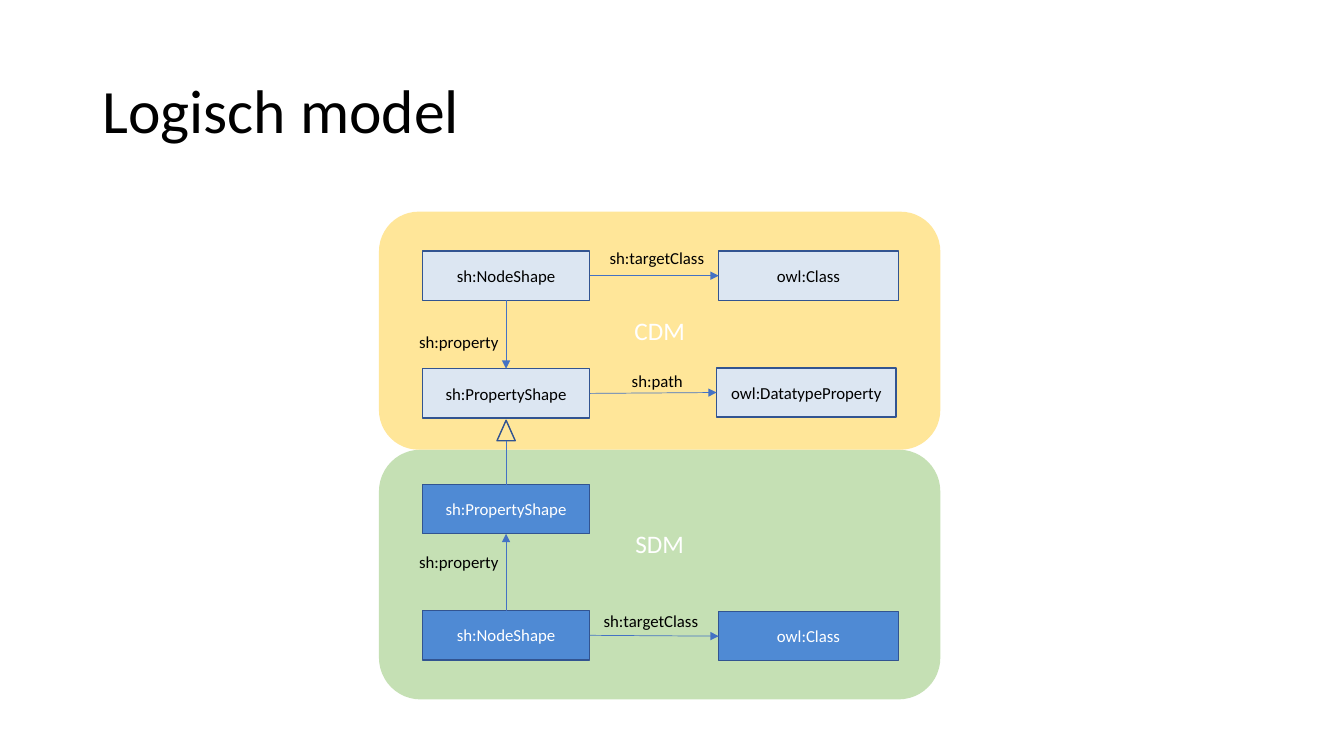
from dataclasses import dataclass

from lxml.etree import SubElement
from pptx import Presentation
from pptx.dml.color import RGBColor
from pptx.enum.shapes import MSO_CONNECTOR as Connector, MSO_SHAPE as Shape
from pptx.enum.text import MSO_ANCHOR as Anchor, PP_ALIGN as Align
from pptx.oxml.ns import qn
from pptx.util import Pt


@dataclass(frozen=True)
class Theme:
    font: str = "Calibri"
    title_size: int = 44
    region_size: int = 18
    node_size: int = 12
    black: str = "000000"
    white: str = "FFFFFF"
    yellow: str = "FFE699"
    green: str = "C5E0B4"
    pale: str = "DCE6F2"
    blue: str = "4F8AD4"
    border: str = "325491"
    arrow: str = "4472C4"


TOP, LEFT, BOTTOM, RIGHT = range(4)  # connection sites of a rectangle
NODE_HEIGHT = 35.2
LEFT_COLUMN = (301.7, 119.6)
RIGHT_COLUMN = (513.4, 128.2)
REGION_X, REGION_WIDTH = 270.7, 401


def write(frame, text, *, font, size, color, align=Align.LEFT,
          anchor=Anchor.TOP, spacing=1.0):
    frame.word_wrap = True
    frame.vertical_anchor = anchor
    para = frame.paragraphs[0]
    para.alignment = align
    para.line_spacing = spacing
    span = para.add_run()
    span.text = text
    span.font.name = font
    span.font.size = Pt(size)
    span.font.color.rgb = RGBColor.from_string(color)


class ModelPage:
    def __init__(self, deck, theme):
        self.theme = theme
        self.page = deck.slides.add_slide(deck.slide_layouts[5])
        self.shapes = self.page.shapes

    def title(self, text):
        box = self.shapes.title
        box.left, box.top, box.width, box.height = map(Pt, (66, 28.8, 828, 104.4))
        write(box.text_frame, text, font=self.theme.font,
              size=self.theme.title_size, color=self.theme.black,
              anchor=Anchor.MIDDLE, spacing=0.9)

    def shape(self, kind, bounds, fill=None, border=None):
        box = self.shapes.add_shape(kind, *map(Pt, bounds))
        box.shadow.inherit = False
        if fill:
            box.fill.solid()
            box.fill.fore_color.rgb = RGBColor.from_string(fill)
        else:
            box.fill.background()
        if border:
            box.line.color.rgb = RGBColor.from_string(border)
            box.line.width = Pt(1)
        else:
            box.line.fill.background()
        return box

    def region(self, text, top, height, fill, lift=0):
        """Draw a rounded area whose name sits `lift` above its middle."""
        bounds = (REGION_X, top, REGION_WIDTH, height)
        box = self.shape(Shape.ROUNDED_RECTANGLE, bounds, fill)
        box.text_frame.margin_bottom = Pt(3.6 + 2 * lift)
        write(box.text_frame, text, font=self.theme.font,
              size=self.theme.region_size, color=self.theme.white,
              align=Align.CENTER, anchor=Anchor.MIDDLE)

    def node(self, text, column, top, fill, color):
        x, width = column
        box = self.shape(Shape.RECTANGLE, (x, top, width, NODE_HEIGHT),
                         fill, self.theme.border)
        write(box.text_frame, text, font=self.theme.font,
              size=self.theme.node_size, color=color,
              align=Align.CENTER, anchor=Anchor.MIDDLE)
        return box

    def label(self, text, x, top, width):
        box = self.shapes.add_textbox(Pt(x), Pt(top), Pt(width), Pt(21.8))
        write(box.text_frame, text, font=self.theme.font,
              size=self.theme.node_size, color=self.theme.black)

    def line(self, begin=(0, 0), end=(0, 0)):
        line = self.shapes.add_connector(
            Connector.STRAIGHT, *map(Pt, (*begin, *end)))
        line.line.color.rgb = RGBColor.from_string(self.theme.arrow)
        line.line.width = Pt(0.5)
        SubElement(line._element.spPr, qn("a:effectLst"))
        return line

    def arrow(self, source, source_site, target, target_site):
        line = self.line()
        line.begin_connect(source, source_site)
        line.end_connect(target, target_site)
        SubElement(line.line._get_or_add_ln(), qn("a:tailEnd"), type="triangle")

    def inheritance(self, center, tip, base, end):
        """Draw a hollow triangle pointing up, with a stem down to `end`."""
        width = 13
        self.shape(Shape.ISOSCELES_TRIANGLE,
                   (center - width / 2, tip, width, base - tip),
                   border=self.theme.border)
        self.line((center, base), (center, end))


def main():
    deck = Presentation()
    deck.slide_width, deck.slide_height = Pt(960), Pt(540)
    theme = Theme()
    model = ModelPage(deck, theme)

    model.region("SDM", 321.2, 178.4, theme.green, lift=22)
    model.region("CDM", 151.2, 170, theme.yellow)
    model.title("Logisch model")

    common = {"fill": theme.pale, "color": theme.black}
    common_class = model.node("owl:Class", RIGHT_COLUMN, 179.3, **common)
    common_node = model.node("sh:NodeShape", LEFT_COLUMN, 179.3, **common)
    common_property = model.node("sh:PropertyShape", LEFT_COLUMN, 263.4, **common)
    datatype = model.node("owl:DatatypeProperty", (511.9, 128.2), 262.8, **common)

    specific = {"fill": theme.blue, "color": theme.white}
    specific_class = model.node("owl:Class", RIGHT_COLUMN, 436.8, **specific)
    specific_node = model.node("sh:NodeShape", LEFT_COLUMN, 436.2, **specific)
    specific_property = model.node("sh:PropertyShape", LEFT_COLUMN, 346.1, **specific)

    model.arrow(common_node, RIGHT, common_class, LEFT)
    model.arrow(common_node, BOTTOM, common_property, TOP)
    model.arrow(common_property, RIGHT, datatype, LEFT)
    model.arrow(specific_node, RIGHT, specific_class, LEFT)
    model.arrow(specific_node, TOP, specific_property, BOTTOM)
    model.inheritance(center=361.5, tip=300.2, base=314.8, end=346.1)

    for text, x, top, width in (
        ("sh:targetClass", 428.4, 173.5, 89.3),
        ("sh:property", 292.3, 233.5, 96.5),
        ("sh:path", 444.2, 261.4, 59.8),
        ("sh:targetClass", 424.1, 432.7, 89.3),
        ("sh:property", 292.3, 390.5, 96.5),
    ):
        model.label(text, x, top, width)

    deck.save("out.pptx")


if __name__ == "__main__":
    main()
